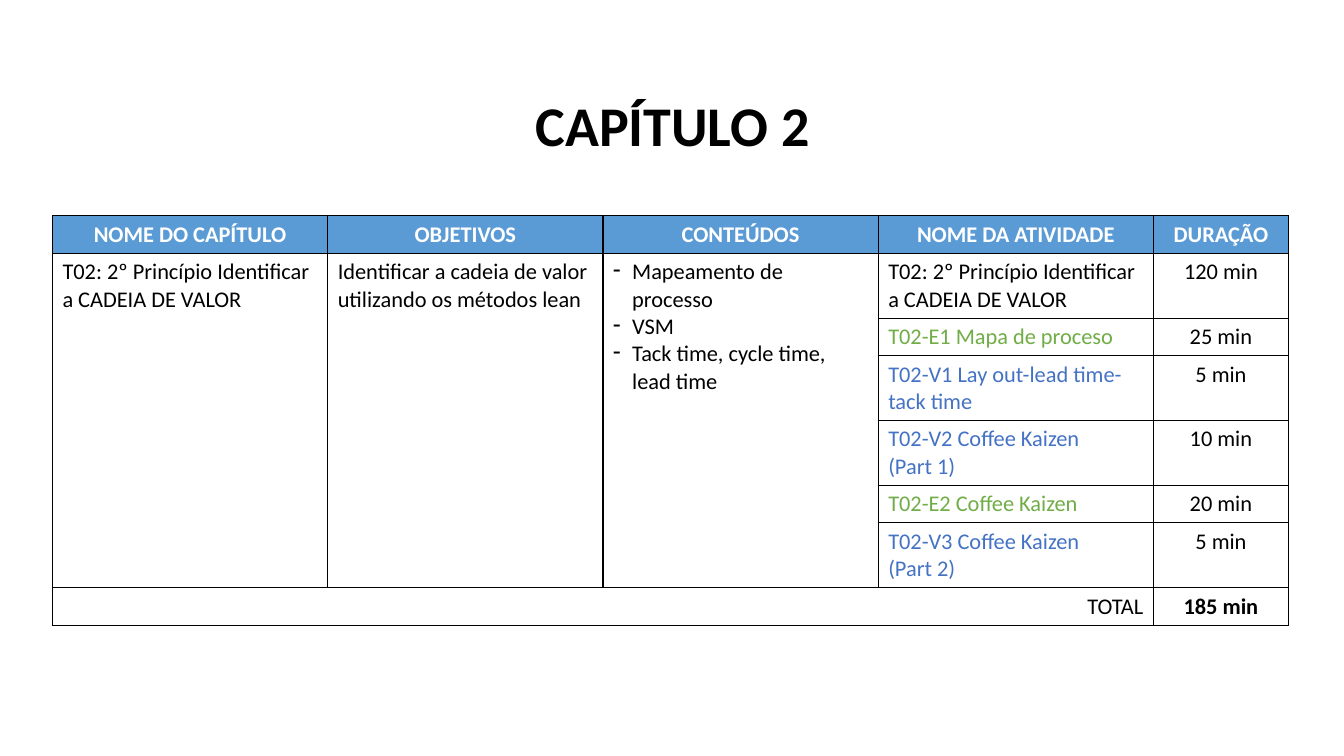
from dataclasses import dataclass

from lxml.etree import SubElement
from pptx import Presentation
from pptx.dml.color import RGBColor
from pptx.enum.text import MSO_ANCHOR, MSO_AUTO_SIZE, PP_ALIGN as Align
from pptx.oxml.ns import qn
from pptx.util import Inches, Pt


@dataclass(frozen=True)
class Theme:
    font: str = "Calibri"
    title_size: int = 40
    table_size: int = 16
    border_width: int = 1
    black: str = "000000"
    white: str = "FFFFFF"
    header: str = "5B9BD5"
    exercise: str = "70AD47"
    video: str = "4472C4"


THEME = Theme()
COLUMN_WIDTHS = [2.73] * 4 + [1.34]
ONE_LINE, TWO_LINES = 0.365, 0.635
HEADINGS = ["NOME DO CAPÍTULO", "OBJETIVOS", "CONTEÚDOS", "NOME DA ATIVIDADE", "DURAÇÃO"]
CHAPTER = "T02: 2º Princípio Identificar a CADEIA DE VALOR"
OBJECTIVE = "Identificar a cadeia de valor utilizando os métodos lean"
CONTENTS = ["Mapeamento de processo", "VSM", "Tack time, cycle time, lead time"]
ACTIVITIES = [  # name, duration, colour, row height
    ([CHAPTER], "120 min", THEME.black, TWO_LINES),
    (["T02-E1 Mapa de proceso"], "25 min", THEME.exercise, ONE_LINE),
    (["T02-V1 Lay out-lead time-tack time"], "5 min", THEME.video, TWO_LINES),
    (["T02-V2 Coffee Kaizen", "(Part 1)"], "10 min", THEME.video, TWO_LINES),
    (["T02-E2 Coffee Kaizen"], "20 min", THEME.exercise, ONE_LINE),
    (["T02-V3 Coffee Kaizen", "(Part 2)"], "5 min", THEME.video, TWO_LINES),
]


def write(frame, lines, size, color=THEME.black, bold=False, align=Align.LEFT, dashes=False):
    """Fill a text frame with one paragraph per line."""
    for index, line in enumerate(lines):
        paragraph = frame.add_paragraph() if index else frame.paragraphs[0]
        paragraph.text = line
        paragraph.alignment = align
        if dashes:
            properties = paragraph._p.get_or_add_pPr()
            indent = Inches(0.19)
            properties.set("marL", str(indent))
            properties.set("indent", str(-indent))
            SubElement(properties, qn("a:buChar"), char="-")
        font = paragraph.font
        font.name, font.size, font.bold = THEME.font, Pt(size), bold
        font.color.rgb = RGBColor.from_string(color)


def style_cell(cell, fill):
    """Give a cell thin black borders and a plain fill."""
    properties = cell._tc.get_or_add_tcPr()
    for side in ("a:lnL", "a:lnR", "a:lnT", "a:lnB"):
        line = SubElement(properties, qn(side), w=str(Pt(THEME.border_width)))
        SubElement(SubElement(line, qn("a:solidFill")), qn("a:srgbClr"), val=THEME.black)
    cell.fill.solid()
    cell.fill.fore_color.rgb = RGBColor.from_string(fill)


def add_title(slide, left, top, width, height):
    frame = slide.shapes.add_textbox(
        Inches(left), Inches(top), Inches(width), Inches(height)).text_frame
    frame.word_wrap = True
    frame.auto_size = MSO_AUTO_SIZE.SHAPE_TO_FIT_TEXT
    write(frame, ["CAPÍTULO 2"], THEME.title_size, bold=True, align=Align.CENTER)


def add_chapter_table(slide, left, top):
    heights = [ONE_LINE, *(activity[3] for activity in ACTIVITIES), ONE_LINE]
    table = slide.shapes.add_table(
        len(heights), len(COLUMN_WIDTHS), Inches(left), Inches(top),
        Inches(sum(COLUMN_WIDTHS)), Inches(sum(heights))).table
    for column, width in zip(table.columns, COLUMN_WIDTHS):
        column.width = Inches(width)
    for index, (row, height) in enumerate(zip(table.rows, heights)):
        row.height = Inches(height)
        for cell in row.cells:
            style_cell(cell, THEME.white if index else THEME.header)

    def fill_cell(row, column, lines, **style):
        write(table.cell(row, column).text_frame, lines, THEME.table_size, **style)

    for column, heading in enumerate(HEADINGS):
        table.cell(0, column).vertical_anchor = MSO_ANCHOR.MIDDLE
        fill_cell(0, column, [heading], color=THEME.white, bold=True, align=Align.CENTER)

    last = len(heights) - 1
    for column, lines in enumerate([[CHAPTER], [OBJECTIVE], CONTENTS]):
        table.cell(1, column).merge(table.cell(last - 1, column))
        fill_cell(1, column, lines, dashes=lines is CONTENTS)

    for row, (name, duration, color, _) in enumerate(ACTIVITIES, start=1):
        fill_cell(row, 3, name, color=color)
        fill_cell(row, 4, [duration], align=Align.CENTER)

    table.cell(last, 0).merge(table.cell(last, 3))
    fill_cell(last, 0, ["TOTAL"], align=Align.RIGHT)
    fill_cell(last, 4, ["185 min"], bold=True, align=Align.CENTER)


def main():
    presentation = Presentation()
    presentation.slide_width, presentation.slide_height = Inches(13.33), Inches(7.5)
    slide = presentation.slides.add_slide(presentation.slide_layouts[6])
    add_chapter_table(slide, 0.52, 2.14)
    add_title(slide, 2.51, 0.85, 8.32, 0.77)
    presentation.save("out.pptx")


if __name__ == "__main__":
    main()
